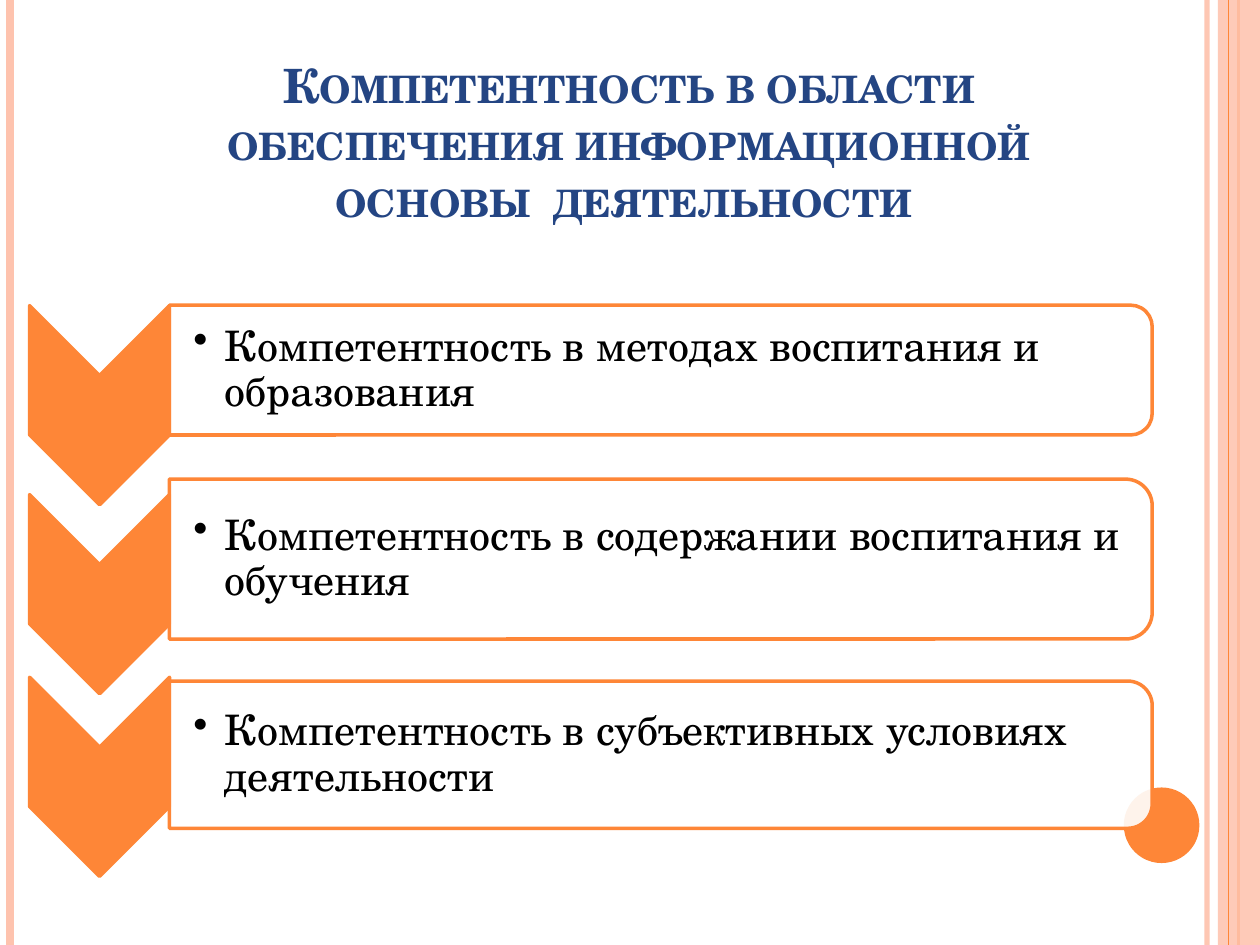
import pptx
import pptx.util
import pptx.dml.color
import pptx.enum.shapes
import pptx.enum.text
import pptx.oxml.ns
from lxml import etree

Pt = pptx.util.Pt
Kind = pptx.enum.shapes.MSO_SHAPE
Anchor = pptx.enum.text.MSO_ANCHOR
Align = pptx.enum.text.PP_ALIGN
qn = pptx.oxml.ns.qn

ORANGE = "FE8637"
PINK = "FEC3AE"


def color(code):
    return pptx.dml.color.RGBColor.from_string(code)


def fade(fill, alpha):
    tint = fill._xPr.find(qn("a:solidFill"))[0]
    etree.SubElement(tint, qn("a:alpha")).set("val", str(alpha * 1000))


class Deck:
    font = "TeX Gyre Schola"
    edge = 2

    def __init__(self, slide):
        self.slide = slide

    def rule(self, x, width, code, alpha=100):
        line = self.slide.shapes.add_connector(
            pptx.enum.shapes.MSO_CONNECTOR.STRAIGHT, Pt(x), Pt(0), Pt(x), Pt(540))
        line.line.width = Pt(width)
        line.line.color.rgb = color(code)
        if alpha < 100:
            fade(line.line.fill, alpha)
        etree.SubElement(line._element.spPr, qn("a:effectLst"))

    def shape(self, kind, x, y, w, h, code, alpha=100, edge=None):
        item = self.slide.shapes.add_shape(kind, Pt(x), Pt(y), Pt(w), Pt(h))
        item.shadow.inherit = False
        item.fill.solid()
        item.fill.fore_color.rgb = color(code)
        if alpha < 100:
            fade(item.fill, alpha)
        if edge:
            item.line.color.rgb = color(edge)
            item.line.width = Pt(self.edge)
        else:
            item.line.fill.background()
        return item

    def turned(self, kind, x, mid, w, h, code, alpha=100):
        left = x + (w - h) / 2
        item = self.shape(kind, left, mid - w / 2, h, w, code, alpha, ORANGE)
        item.rotation = 90

    def text(self, words, x, y, w, h, size, code, anchor, pads):
        box = self.slide.shapes.add_textbox(Pt(x), Pt(y), Pt(w), Pt(h))
        frame = box.text_frame
        frame.word_wrap = True
        frame.vertical_anchor = anchor
        frame.margin_left, frame.margin_top, frame.margin_right, frame.margin_bottom = map(Pt, pads)
        para = frame.paragraphs[0]
        para.text = words
        para.font.name = self.font
        para.font.size = Pt(size)
        para.font.color.rgb = color(code)
        return para

    def title(self, words, x, y, w, h):
        para = self.text(words, x, y, w, h, 27, "244583",
                         Anchor.BOTTOM, (7.2, 3.6, 7.2, 3.6))
        para.alignment = Align.CENTER
        para.font.bold = True
        para.runs[0]._r.get_or_add_rPr().set("cap", "small")

    def bullet(self, words, x, y, w, h):
        para = self.text(words, x, y, w, h, 24, "000000",
                         Anchor.MIDDLE, (13.7, 1.2, 1.2, 1.2))
        para.line_spacing = 0.9
        para.space_after = Pt(3.6)
        props = para._p.get_or_add_pPr()
        props.set("marL", str(Pt(18)))
        props.set("indent", str(-Pt(18)))
        mark = etree.Element(qn("a:buChar"))
        mark.set("char", "•")
        props.find(qn("a:defRPr")).addprevious(mark)

    def row(self, words, tip, mid, high):
        self.turned(Kind.CHEVRON, 16.9, tip, 80, 113.8, ORANGE)
        self.turned(Kind.ROUND_2_SAME_RECTANGLE, 96.8, mid, 561.6, high, "FFFFFF", 90)
        self.bullet(words, 96.8, mid - high / 2 + 4, 557.6, high - 8)


def main():
    show = pptx.Presentation()
    show.slide_width = Pt(720)
    show.slide_height = Pt(540)
    deck = Deck(show.slides.add_slide(show.slide_layouts[6]))

    deck.rule(689.8, 3, PINK, 93)
    deck.rule(5.8, 4.5, PINK)
    deck.rule(707.8, 1.5, ORANGE)
    deck.shape(Kind.RECTANGLE, 696, 0, 24, 540, PINK, 87)
    deck.rule(702, 0.75, ORANGE)
    deck.shape(Kind.OVAL, 642.2, 450, 43.2, 43.2, ORANGE)

    deck.title("Компетентность в области обеспечения информационной "
               "основы  деятельности ", 65.5, 43.2, 588.2, 90)

    rows = [
        ("Компетентность в методах воспитания и образования", 231.5, 211.5, 74.2),
        ("Компетентность в содержании воспитания и обучения", 339.5, 319.5, 91.4),
        ("Компетентность в субъективных условиях деятельности", 443.9, 431.3, 84.2),
    ]
    for row in rows:
        deck.row(*row)

    show.save("out.pptx")


if __name__ == "__main__":
    main()
